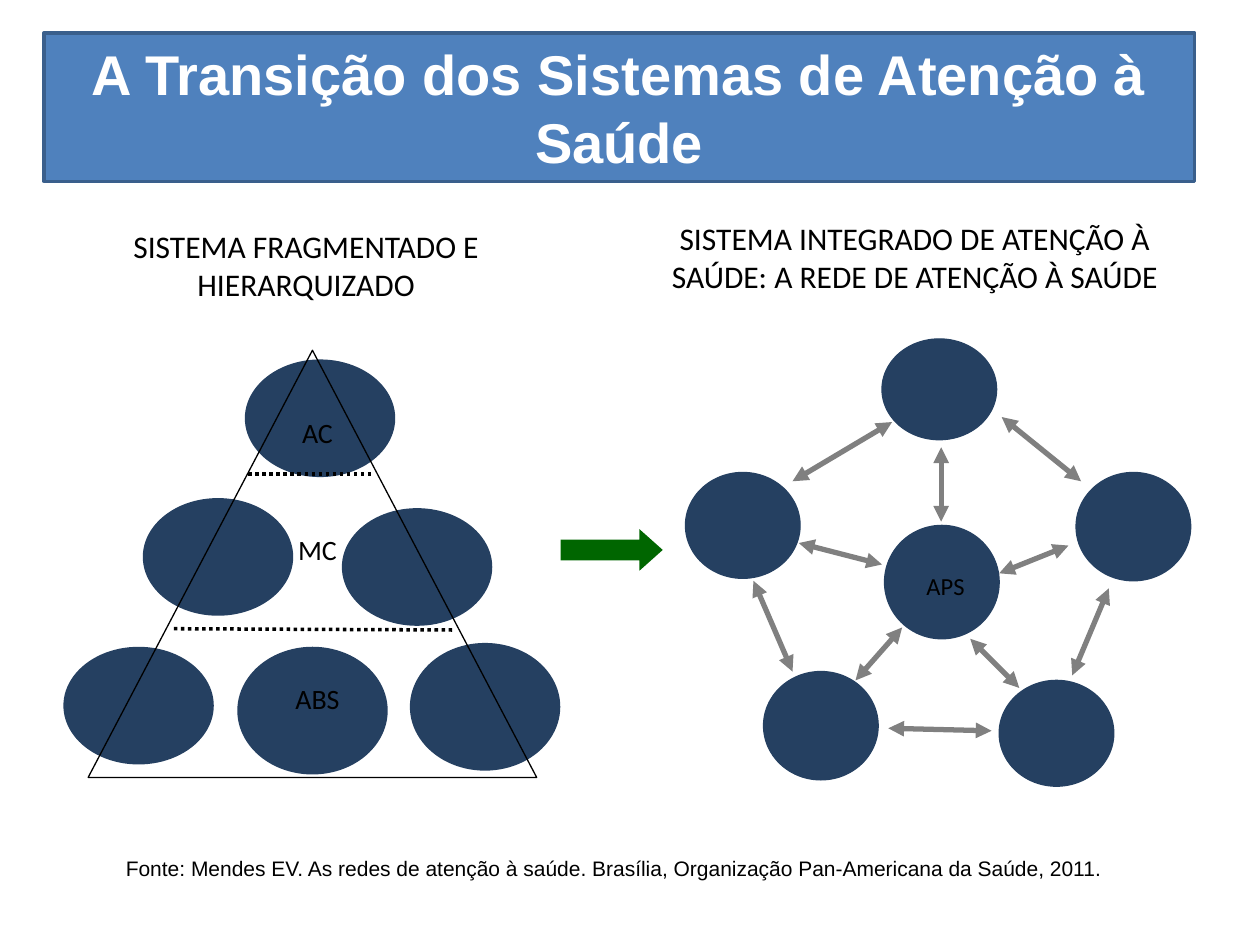
from lxml.etree import SubElement
from pptx import Presentation
from pptx.dml.color import RGBColor
from pptx.enum.dml import MSO_LINE
from pptx.enum.shapes import MSO_CONNECTOR, MSO_SHAPE
from pptx.enum.text import MSO_ANCHOR, MSO_AUTO_SIZE, PP_ALIGN
from pptx.oxml.ns import qn
from pptx.util import Inches, Pt

COLORS = {
    "banner": "4F81BD", "banner_line": "3A5F8C", "circle": "254061",
    "transition": "006600", "link": "808080", "black": "000000", "white": "FFFFFF",
}


def color(name):
    return RGBColor.from_string(COLORS[name])


def inches(*values):
    return [Inches(value) for value in values]


def style_text(paragraph, text, size, font="Calibri", fill="black", align=PP_ALIGN.CENTER):
    paragraph.text = text
    paragraph.alignment = align
    paragraph.font.size = Pt(size)
    paragraph.font.name = font
    paragraph.font.color.rgb = color(fill)


def add_label(slide, box, text, size, margins=(0.1, 0.05), **style):
    text_frame = slide.shapes.add_textbox(*inches(*box)).text_frame
    text_frame.word_wrap = True
    text_frame.margin_left = text_frame.margin_right = Inches(margins[0])
    text_frame.margin_top = text_frame.margin_bottom = Inches(margins[1])
    style_text(text_frame.paragraphs[0], text, size, **style)
    return text_frame.paragraphs[0]


def add_heading(slide, box, text):
    add_label(slide, box, text, 18, (0.09, 0.04)).space_before = Pt(11)


def add_circle(slide, box, line_width):
    circle = slide.shapes.add_shape(MSO_SHAPE.OVAL, *inches(*box))
    circle.shadow.inherit = False
    circle.fill.solid()
    circle.fill.fore_color.rgb = circle.line.color.rgb = color("circle")
    circle.line.width = Pt(line_width)


def add_line(slide, left, top, ends, line_color, width):
    x1, y1, x2, y2 = ends
    connector = slide.shapes.add_connector(
        MSO_CONNECTOR.STRAIGHT, *inches(left + x1, top + y1, left + x2, top + y2))
    connector.line.color.rgb = color(line_color)
    connector.line.width = Pt(width)
    SubElement(connector._element.spPr, qn("a:effectLst"))
    return connector


def add_double_arrow(slide, left, top, ends):
    connector = add_line(slide, left, top, ends, "link", 3)
    line = connector._element.spPr.find(qn("a:ln"))
    for end in ("a:headEnd", "a:tailEnd"):
        SubElement(line, qn(end), type="triangle")


def format_title(title, left, top, width, height):
    title.left, title.top, title.width, title.height = inches(left, top, width, height)
    title.fill.solid()
    title.fill.fore_color.rgb = color("banner")
    title.line.color.rgb = color("banner_line")
    title.line.width = Pt(2)
    title.text_frame.auto_size = MSO_AUTO_SIZE.NONE
    title.text_frame.vertical_anchor = MSO_ANCHOR.MIDDLE
    paragraph = title.text_frame.paragraphs[0]
    style_text(paragraph, "A Transição dos Sistemas de Atenção à Saúde", 32, "Arial", "white")
    paragraph.font.bold = True


def add_fragmented_system(slide, left, top):
    add_heading(slide, (left + 0.11, top + 0.06, 3.64, 0.69),
                "SISTEMA FRAGMENTADO E HIERARQUIZADO")
    # Care services on three levels
    for x, y, height in (
        (1.45, 1.16, 0.92),
        (0.64, 2.26, 0.92), (2.22, 2.34, 0.92),
        (0.01, 3.44, 0.92), (1.39, 3.44, 1), (2.76, 3.41, 1),
    ):
        add_circle(slide, (left + x, top + y, 1.18, height), 1)
    # Level dividers
    for ends in ((1.47, 2.06, 2.46, 2.06), (0.88, 3.29, 3.1, 3.3)):
        divider = add_line(slide, left, top, ends, "black", 2)
        divider.line.dash_style = MSO_LINE.ROUND_DOT
    # Level names
    for text, y in (("AC", 1.55), ("MC", 2.48), ("ABS", 3.66)):
        add_label(slide, (left + 1.64, top + y, 0.76, 0.37), text, 16)
    # Pyramid outline
    pyramid = slide.shapes.add_shape(
        MSO_SHAPE.ISOSCELES_TRIANGLE, *inches(left + 0.2, top + 1.08, 3.56, 3.39))
    pyramid.shadow.inherit = False
    pyramid.fill.background()
    pyramid.line.color.rgb = color("black")
    pyramid.line.width = Pt(0.75)


def add_transition_arrow(slide, left, top, width, height):
    arrow = slide.shapes.add_shape(
        MSO_SHAPE.RIGHT_ARROW, *inches(left, top, width, height))
    arrow.adjustments[1] = 0.56
    arrow.shadow.inherit = False
    arrow.fill.solid()
    arrow.fill.fore_color.rgb = color("transition")
    arrow.line.fill.background()


def add_integrated_network(slide, left, top):
    add_heading(slide, (left, top, 4.62, 0.7),
                "SISTEMA INTEGRADO DE ATENÇÃO À SAÚDE: A REDE DE ATENÇÃO À SAÚDE")
    # Centre, then the five outer nodes clockwise from the top
    for x, y, height in (
        (2.07, 2.47, 0.9),
        (2.05, 0.99, 0.8), (3.59, 2.05, 0.86), (2.98, 3.7, 0.84),
        (1.11, 3.63, 0.86), (0.49, 2.05, 0.84),
    ):
        add_circle(slide, (left + x, top + y, 0.91, height), 0.75)
    add_label(slide, (left + 2.17, top + 2.79, 0.77, 0.32), "APS", 14, (0.09, 0.04))
    # Outer ring, then spokes
    for ends in (
        (3, 1.61, 3.63, 2.12), (3.85, 2.97, 3.56, 3.66), (2.92, 4.1, 2.1, 4.08),
        (1.03, 2.91, 1.34, 3.63), (1.34, 2.12, 2.13, 1.65),
        (2.52, 1.85, 2.52, 2.44), (2.98, 2.85, 3.53, 2.63), (2.75, 3.37, 3.14, 3.76),
        (2.21, 3.28, 1.84, 3.7), (1.39, 2.61, 2.05, 2.78),
    ):
        add_double_arrow(slide, left, top, ends)


def main():
    presentation = Presentation()
    presentation.slide_width, presentation.slide_height = inches(10, 7.5)
    slide = presentation.slides.add_slide(presentation.slide_layouts[5])

    format_title(slide.shapes.title, 0.35, 0.26, 9.13, 1.18)
    add_fragmented_system(slide, 0.5, 1.7)
    add_transition_arrow(slide, 4.45, 4.2, 0.81, 0.33)
    add_integrated_network(slide, 4.95, 1.7)
    add_label(slide, (0.9, 6.74, 8.58, 0.61),
              "Fonte: Mendes EV. As redes de atenção à saúde. Brasília, "
              "Organização Pan-Americana da Saúde, 2011.",
              12, font="Arial", align=PP_ALIGN.LEFT)
    presentation.save("out.pptx")


if __name__ == "__main__":
    main()
